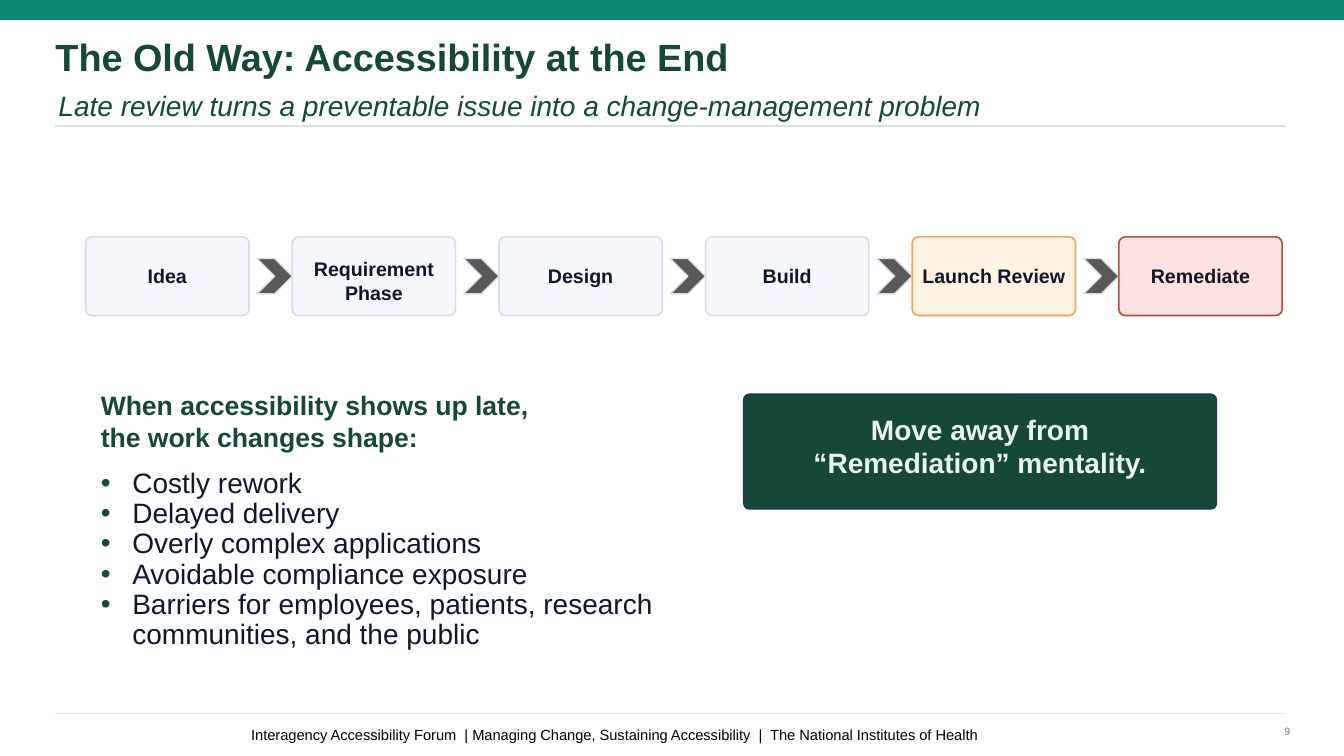
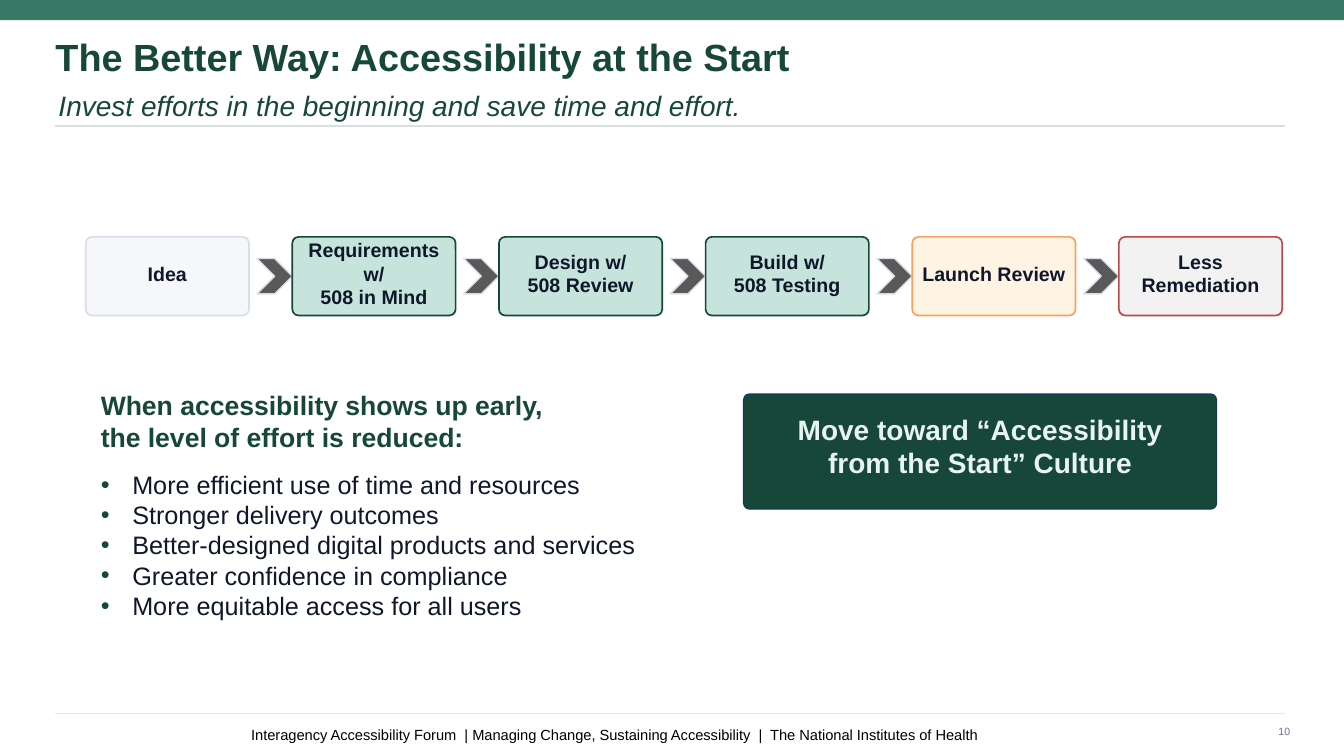
"""Builds two slides that compare late and early accessibility work."""
from lxml import etree
from pptx import Presentation
from pptx.dml.color import RGBColor
from pptx.enum.shapes import MSO_CONNECTOR as Connector, MSO_SHAPE as Shape
from pptx.enum.text import MSO_ANCHOR as Anchor, MSO_AUTO_SIZE as AutoSize, PP_ALIGN as Align
from pptx.oxml.ns import qn
from pptx.util import Pt

GREEN, INK, RULE, FOOT_RULE = "174738", "0F172A", "D8DEE9", "E2E8F0"
PLAIN = ("F5F7FA", RULE)
EARLY = ("C6E4DC", GREEN)
REVIEW = ("FFF3E4", "F4A261")
LATE = ("FDE2E1", "B94A48")
LESS = ("F2F2F2", "B94A48")
CALLOUT = (GREEN, "183A59")
CHEVRON = ("595959", RULE)

FOOTER = ("Interagency Accessibility Forum  | Managing Change, Sustaining Accessibility"
          "  |  The National Institutes of Health")
FIRST_NUMBER = 9

SLIDES = [
    {
        "band": "0E8775",
        "title": "The Old Way: Accessibility at the End",
        "subtitle": "Late review turns a preventable issue into a change-management problem",
        "steps": [("Idea", PLAIN, -0.7), ("Requirement Phase", PLAIN, 3.2), ("Design", PLAIN, -0.7),
                  ("Build", PLAIN, -0.7), ("Launch Review", REVIEW, -0.7), ("Remediate", LATE, -0.7)],
        "heading": "When accessibility shows up late,\nthe work changes shape:",
        "bullets": ["Costly rework", "Delayed delivery", "Overly complex applications",
                    "Avoidable compliance exposure",
                    "Barriers for employees, patients, research communities, and the public"],
        "list_top": 333.4, "list_size": 20, "list_spacing": 0.9,
        "callout": "Move away from\n“Remediation” mentality.",
    },
    {
        "band": "377965",
        "title": "The Better Way: Accessibility at the Start",
        "subtitle": "Invest efforts in the beginning and save time and effort.",
        "steps": [("Idea", PLAIN, -2), ("Requirements w/\n508 in Mind", EARLY, -2),
                  ("Design w/\n508 Review", EARLY, -2), ("Build w/\n508 Testing", EARLY, -2),
                  ("Launch Review", REVIEW, -2), ("Less\nRemediation", LESS, -2)],
        "heading": "When accessibility shows up early,\nthe level of effort is reduced:",
        "bullets": ["More efficient use of time and resources", "Stronger delivery outcomes",
                    "Better-designed digital products and services",
                    "Greater confidence in compliance", "More equitable access for all users"],
        "list_top": 322.6, "list_size": 18, "list_spacing": 1.0,
        "callout": "Move toward “Accessibility from the Start” Culture",
    },
]

STYLES = {
    "title": {"size": 27, "bold": True, "color": GREEN},
    "subtitle": {"size": 20, "italic": True, "color": GREEN},
    "step": {"size": 14, "bold": True, "color": INK, "align": Align.CENTER},
    "heading": {"size": 19, "bold": True, "color": GREEN},
    "list": {"size": 20, "color": INK},
    "callout": {"size": 20, "bold": True, "color": "E8F4F1", "align": Align.CENTER},
    "footer": {"size": 10.5, "color": "000000", "align": Align.CENTER},
    "number": {"size": 7.5, "color": "64748B", "align": Align.RIGHT},
}

WIDTH, HEIGHT = 960, 540
MARGIN, RIGHT = 39.6, 918
STEP_LEFT, STEP_TOP, STEP_WIDTH, STEP_HEIGHT, STEP_PITCH = 61.2, 169.2, 116.64, 56.16, 147.6
CHEVRON_SIZE = 25.2
LIST_INDENT = 22.5


def rgb(value):
    """Return the colour for a hex string."""
    return RGBColor.from_string(value)


def points(*values):
    """Return the values as lengths in points."""
    return [Pt(value) for value in values]


def write(shape, text, style, insets=(0, 0, 0, 0), spacing=1.0):
    """Write one paragraph for each line of the text in the given style."""
    frame = shape.text_frame
    left, top, right, bottom = points(*insets)
    settings = {"word_wrap": True, "auto_size": AutoSize.NONE, "vertical_anchor": Anchor.MIDDLE,
                "margin_left": left, "margin_top": top, "margin_right": right, "margin_bottom": bottom}
    for name, value in settings.items():
        setattr(frame, name, value)
    for index, line in enumerate(text.split("\n")):
        paragraph = frame.add_paragraph() if index else frame.paragraphs[0]
        layout = {"alignment": style.get("align", Align.LEFT), "line_spacing": spacing,
                  "space_before": Pt(0), "space_after": Pt(0)}
        for name, value in layout.items():
            setattr(paragraph, name, value)
        run = paragraph.add_run()
        run.text = line
        font = {"name": "Arial", "size": Pt(style["size"]),
                "bold": style.get("bold", False), "italic": style.get("italic", False)}
        for name, value in font.items():
            setattr(run.font, name, value)
        run.font.color.rgb = rgb(style["color"])


def add_text(slide, box, text, style_name):
    """Add a text box."""
    write(slide.shapes.add_textbox(*points(*box)), text, STYLES[style_name])


def fill_placeholder(shape, box, text, style, spacing=1.0):
    """Move a placeholder and write its text."""
    for name, value in zip(("left", "top", "width", "height"), points(*box)):
        setattr(shape, name, value)
    write(shape, text, style, spacing=spacing)


def add_panel(slide, kind, box, colors, line_width=1, corner=None):
    """Add a filled shape, outlined when a second colour is given."""
    shape = slide.shapes.add_shape(kind, *points(*box))
    shape.shadow.inherit = False
    fill, line = colors
    shape.fill.solid()
    shape.fill.fore_color.rgb = rgb(fill)
    if line:
        shape.line.color.rgb = rgb(line)
        shape.line.width = Pt(line_width)
    else:
        shape.line.fill.background()
    if corner is not None:
        shape.adjustments[0] = corner
    return shape


def add_rule(slide, top, color):
    """Add a horizontal line between the margins."""
    rule = slide.shapes.add_connector(Connector.STRAIGHT, *points(MARGIN, top, RIGHT, top))
    rule.line.color.rgb = rgb(color)
    rule.line.width = Pt(1)
    etree.SubElement(rule._element.spPr, qn("a:effectLst"))


def add_bullets(shape):
    """Give each paragraph a coloured bullet and a hanging indent."""
    for paragraph in shape.text_frame.paragraphs:
        properties = paragraph._p.get_or_add_pPr()
        properties.set("marL", str(Pt(LIST_INDENT)))
        properties.set("indent", str(-Pt(LIST_INDENT)))
        color = etree.SubElement(properties, qn("a:buClr"))
        etree.SubElement(color, qn("a:srgbClr"), val=GREEN)
        etree.SubElement(properties, qn("a:buFont"), typeface="Arial")
        etree.SubElement(properties, qn("a:buChar"), char="•")


def add_frame(slide, content, number):
    """Add the band, title, subtitle, rules and footer."""
    add_panel(slide, Shape.RECTANGLE, (0, 0, WIDTH, 14.4), (content["band"], None))
    fill_placeholder(slide.shapes.title, (MARGIN, 23, 856.8, 34.6), content["title"], STYLES["title"])
    add_text(slide, (41.8, 63.4, 828, 23), content["subtitle"], "subtitle")
    add_rule(slide, 90, RULE)
    add_rule(slide, 509.8, FOOT_RULE)
    add_text(slide, (137, 517.7, 604.8, 14.4), FOOTER, "footer")
    add_text(slide, (896.4, 515.5, 25.2, 14.4), str(number), "number")


def add_process(slide, steps):
    """Add the row of steps with a chevron before each step but the first."""
    for index, (label, colors, shift) in enumerate(steps):
        left = STEP_LEFT + index * STEP_PITCH
        if index:
            top = STEP_TOP + (STEP_HEIGHT - CHEVRON_SIZE) / 2
            add_panel(slide, Shape.CHEVRON, (left - CHEVRON_SIZE, top, CHEVRON_SIZE, CHEVRON_SIZE), CHEVRON)
        step = add_panel(slide, Shape.ROUNDED_RECTANGLE, (left, STEP_TOP, STEP_WIDTH, STEP_HEIGHT),
                         colors, 1.2, 0.08)
        write(step, label, STYLES["step"], (4, max(0, 2 * shift), 4, max(0, -2 * shift)))


def add_message(slide, content):
    """Add the heading, the list and the callout."""
    add_text(slide, (72, 288, 388.8, 25.2), content["heading"], "heading")
    body = slide.placeholders[1]
    fill_placeholder(body, (72, content["list_top"], 396, 133.2), "\n".join(content["bullets"]),
                     {**STYLES["list"], "size": content["list_size"]}, content["list_spacing"])
    add_bullets(body)
    callout = add_panel(slide, Shape.ROUNDED_RECTANGLE, (531.2, 281.5, 337.7, 82.1), CALLOUT, corner=0.05)
    write(callout, content["callout"], STYLES["callout"], (20, 0, 20, 8))


def main():
    """Build and save the presentation."""
    presentation = Presentation()
    presentation.slide_width, presentation.slide_height = points(WIDTH, HEIGHT)
    for number, content in enumerate(SLIDES, FIRST_NUMBER):
        slide = presentation.slides.add_slide(presentation.slide_layouts[1])
        add_frame(slide, content, number)
        add_process(slide, content["steps"])
        add_message(slide, content)
    presentation.save("out.pptx")


if __name__ == "__main__":
    main()
